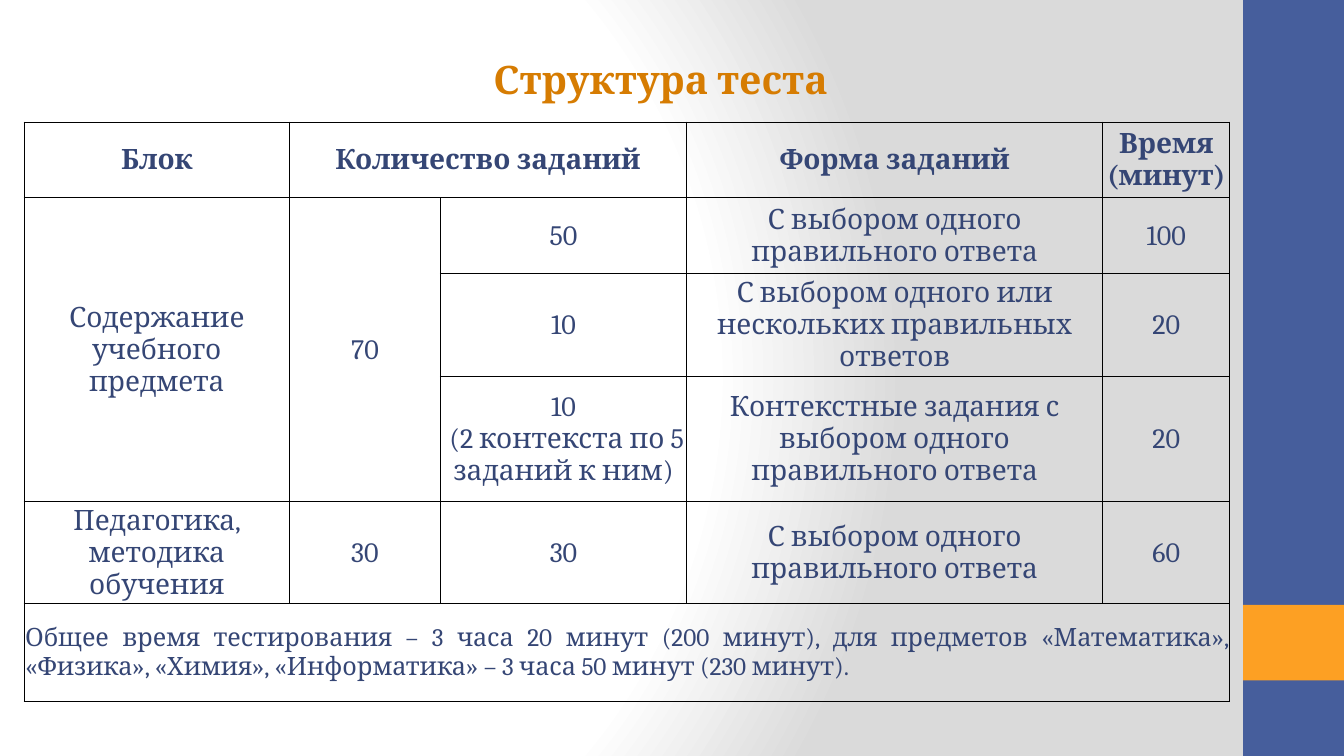
from dataclasses import dataclass

from pptx import Presentation
from pptx.dml.color import RGBColor
from pptx.enum.shapes import MSO_SHAPE
from pptx.enum.text import MSO_ANCHOR, PP_ALIGN
from pptx.oxml import parse_xml
from pptx.oxml.ns import nsdecls
from pptx.util import Pt

FONT = "Cambria"
INK = "354675"
COLS = [189.4, 108, 175.7, 297.4, 90.7]
ROWS = [54, 54, 73.5, 89.7, 72.8, 70]


@dataclass
class Bar:
    top: float
    height: float
    color: str


@dataclass
class Entry:
    row: int
    col: int
    text: str
    down: int = 1
    across: int = 1
    size: float = 20
    align: PP_ALIGN = PP_ALIGN.CENTER


BARS = [Bar(0, 540, "465E9C"), Bar(432, 54, "FDA023")]
ONE = "С выбором одного правильного ответа"
ENTRIES = [
    Entry(0, 0, "Блок"),
    Entry(0, 1, "Количество заданий", across=2),
    Entry(0, 3, "Форма заданий"),
    Entry(0, 4, "Время (минут)"),
    Entry(1, 0, "Содержание учебного предмета", down=3),
    Entry(1, 1, "70", down=3),
    Entry(1, 2, "50"),
    Entry(1, 3, ONE),
    Entry(1, 4, "100"),
    Entry(2, 2, "10"),
    Entry(2, 3, "С выбором одного или нескольких правильных ответов"),
    Entry(2, 4, "20"),
    Entry(3, 2, "10\n (2 контекста по 5 заданий к ним)"),
    Entry(3, 3, "Контекстные задания с выбором одного правильного ответа"),
    Entry(3, 4, "20"),
    Entry(4, 0, "Педагогика, методика обучения"),
    Entry(4, 1, "30"),
    Entry(4, 2, "30"),
    Entry(4, 3, ONE),
    Entry(4, 4, "60"),
    Entry(5, 0, "Общее время тестирования – 3 часа 20 минут (200 минут), "
          "для предметов «Математика», «Физика», «Химия», «Информатика» – "
          "3 часа 50 минут (230 минут).",
          across=5, size=18, align=PP_ALIGN.JUSTIFY),
]


def paint(target, color: str) -> None:
    target.rgb = RGBColor.from_string(color)


def write(frame, text: str, size: float, color: str, bold: bool,
          align: PP_ALIGN = PP_ALIGN.CENTER) -> None:
    para = frame.paragraphs[0]
    para.alignment = align
    for i, line in enumerate(text.split("\n")):
        if i:
            para.add_line_break()
        run = para.add_run()
        run.text = line
        run.font.name = FONT
        run.font.size = Pt(size)
        run.font.bold = bold
        paint(run.font.color, color)


def add_back(slide) -> None:
    stops = [(0, "FFFFFF"), (75, "FFFFFF"), (100, "DADADA")]
    marks = "".join(f'<a:gs pos="{pos * 1000}"><a:srgbClr val="{color}"/></a:gs>'
                    for pos, color in stops)
    back = parse_xml(
        f'<p:bg {nsdecls("p", "a")}><p:bgPr><a:gradFill rotWithShape="1">'
        f'<a:gsLst>{marks}</a:gsLst><a:path path="circle">'
        '<a:fillToRect l="20000" t="50000" r="100000" b="50000"/></a:path>'
        '</a:gradFill><a:effectLst/></p:bgPr></p:bg>')
    slide.element.cSld.insert(0, back)


def add_bar(slide, bar: Bar) -> None:
    shape = slide.shapes.add_shape(MSO_SHAPE.RECTANGLE, Pt(888), Pt(bar.top),
                                   Pt(72), Pt(bar.height))
    shape.shadow.inherit = False
    shape.fill.solid()
    paint(shape.fill.fore_color, bar.color)
    shape.line.fill.background()


def add_title(slide, text: str) -> None:
    box = slide.shapes.add_textbox(Pt(14.4), Pt(36), Pt(915), Pt(41))
    box.text_frame.word_wrap = True
    box.text_frame.vertical_anchor = MSO_ANCHOR.MIDDLE
    write(box.text_frame, text, 28, "D67C02", True)


def style(cell) -> None:
    props = cell._tc.get_or_add_tcPr()
    for side in "LRTB":
        props.append(parse_xml(
            f'<a:ln{side} {nsdecls("a")} w="12700"><a:solidFill>'
            f'<a:srgbClr val="000000"/></a:solidFill></a:ln{side}>'))
    cell.fill.background()
    cell.vertical_anchor = MSO_ANCHOR.MIDDLE
    cell.margin_left = cell.margin_right = cell.margin_top = Pt(0.7)
    cell.margin_bottom = Pt(0)


def add_grid(slide) -> None:
    table = slide.shapes.add_table(len(ROWS), len(COLS), Pt(17.3), Pt(87.3),
                                   Pt(sum(COLS)), Pt(sum(ROWS))).table
    table.first_row = table.horz_banding = False
    for col, width in zip(table.columns, COLS):
        col.width = Pt(width)
    for row, height in zip(table.rows, ROWS):
        row.height = Pt(height)
    for cell in table.iter_cells():
        style(cell)
    for item in ENTRIES:
        cell = table.cell(item.row, item.col)
        if item.down > 1 or item.across > 1:
            cell.merge(table.cell(item.row + item.down - 1,
                                  item.col + item.across - 1))
        write(cell.text_frame, item.text, item.size, INK, item.row == 0,
              item.align)


def main() -> None:
    deck = Presentation()
    deck.slide_width, deck.slide_height = Pt(960), Pt(540)
    slide = deck.slides.add_slide(deck.slide_layouts[6])
    # Background and side bars
    add_back(slide)
    for bar in BARS:
        add_bar(slide, bar)
    # Heading and test table
    add_title(slide, "Структура теста")
    add_grid(slide)
    deck.save("out.pptx")


if __name__ == "__main__":
    main()
